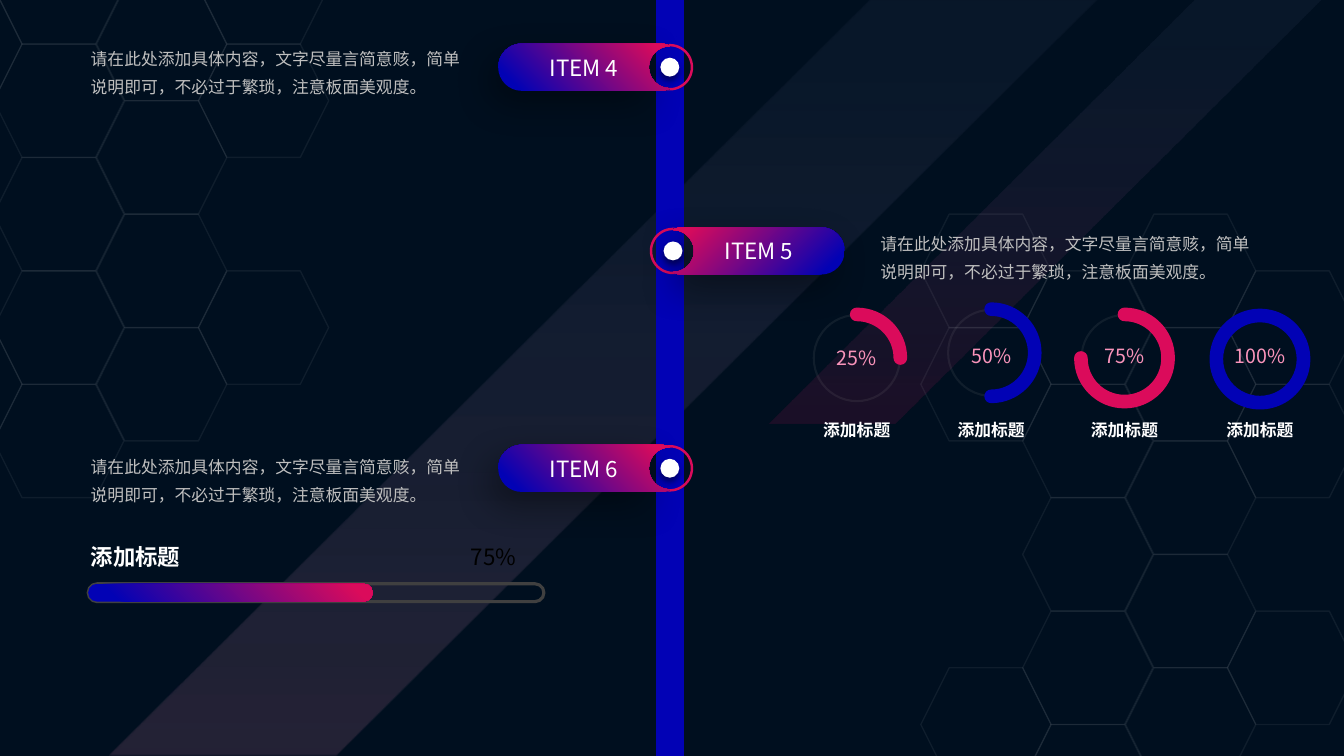
import math
from itertools import islice

from lxml import etree
from pptx import Presentation
from pptx import util as u
from pptx.dml.color import RGBColor
from pptx.enum import shapes, text
from pptx.oxml.ns import qn

PX = 9525
WIDTH, HEIGHT = 1280, 720
FONT = "Noto Sans CJK SC"
COLORS = {
    "navy": "000F1F", "blue": "0202B5", "red": "DB0B5B", "pink": "FA94BB",
    "lilac": "BEBEFE", "white": "FFFFFF", "black": "000000",
    "body": "BFBFBF", "frame": "404040", "track": "A5A5A5",
}
DESCRIPTION = "请在此处添加具体内容，文字尽量言简意赅，简单说明即可，不必过于繁琐，注意板面美观度。"
CAPTION = "添加标题"
SHAPE = shapes.MSO_SHAPE
ALIGN = text.PP_ALIGN
MIDDLE = text.MSO_ANCHOR.MIDDLE

HEX_WIDTH, HEX_HEIGHT = 124, 108
# Half rows filled in each column of the two honeycombs
LEFT_COMB = [(0, 6), (-1, 1, 3, 5, 7), (0, 2, 4, 6), (-1, 1, 5)]
RIGHT_COMB = [(0, 2, 8), (1, 3, 5, 7, 9), (0, 2, 4, 6, 8), (1, 3, 7)]

# Label, hub centre, side of the pill (-1 left, 1 right), description corner
ITEMS = [
    ("ITEM 4", 638, 64, -1, 77, 34),
    ("ITEM 5", 641, 239, 1, 829, 210),
    ("ITEM 6", 638, 446, -1, 77, 423),
]
PILL_RADIUS = 22.5
# Percent, centre, top of the label, colour
GAUGES = [
    (25, 816, 341, 324, "red"),
    (50, 944, 336, 322, "blue"),
    (75, 1071, 341, 322, "red"),
    (100, 1200, 342, 322, "blue"),
]
GAUGE_OUTER, GAUGE_INNER = 48, 35
TRACK_RADIUS, TRACK_WIDTH = 42, 2


def rgb(name):
    return RGBColor.from_string(COLORS[name])


def paint(shape, fill=None, line=None, width=1):
    shape.shadow.inherit = False
    if fill:
        shape.fill.solid()
        shape.fill.fore_color.rgb = rgb(fill)
    else:
        shape.fill.background()
    if line:
        shape.line.color.rgb = rgb(line)
        shape.line.width = u.Pt(width)
    else:
        shape.line.fill.background()


def paint_gradient(shape, stops, angle):
    """Fill with two (position, colour) stops; the angle runs counter-clockwise."""
    shape.fill.gradient()
    shape.fill.gradient_angle = angle
    for stop, (position, color) in zip(shape.fill.gradient_stops, stops):
        stop.position = position
        stop.color.rgb = rgb(color)


def set_opacity(shape, *percents):
    """Give the shape's colours, in order, their opacity."""
    colors = list(shape._element.spPr.iter(qn("a:srgbClr")))
    for color, percent in zip(colors, percents):
        etree.SubElement(color, qn("a:alpha"), val=str(percent * 1000))


def add_shadow(shape, opacity, blur, distance, direction):
    effects = shape._element.spPr.find(qn("a:effectLst"))
    shadow = etree.SubElement(
        effects, qn("a:outerShdw"), blurRad=str(u.Pt(blur)), dist=str(u.Pt(distance)),
        dir=str(direction * 60000), algn="ctr", rotWithShape="0")
    color = etree.SubElement(shadow, qn("a:srgbClr"), val=COLORS["black"])
    etree.SubElement(color, qn("a:alpha"), val=str(opacity * 1000))


def add_preset(slide, kind, left, top, width, height, adjustment=None):
    shape = slide.shapes.add_shape(kind, *(value * PX for value in (left, top, width, height)))
    if adjustment is not None:
        shape.adjustments[0] = adjustment
    return shape


def add_disc(slide, kind, x, y, radius, adjustment=None):
    return add_preset(slide, kind, x - radius, y - radius, 2 * radius, 2 * radius, adjustment)


def arc(x, y, radius, start, end):
    """Start point, then Bézier triples; degrees run clockwise from the top."""
    count = math.ceil(abs(end - start) / 90)
    step = math.radians(end - start) / count
    reach = 4 / 3 * math.tan(step / 4)

    def point(angle, pull):
        return (x + radius * (math.sin(angle) + pull * math.cos(angle)),
                y - radius * (math.cos(angle) - pull * math.sin(angle)))

    angle = math.radians(start)
    points = [point(angle, 0)]
    for _ in range(count):
        points += [point(angle, reach), point(angle + step, -reach), point(angle + step, 0)]
        angle += step
    return points


def add_outline(slide, *arcs):
    """Join arcs by straight lines into one closed outline."""
    corners = [(round(x * PX), round(y * PX)) for points in arcs for x, y in points]
    builder = slide.shapes.build_freeform(*corners[0], scale=1.0)
    builder.add_line_segments(corners[1:], close=True)
    shape = builder.convert_to_shape()
    lines = iter(list(shape._element.iter(qn("a:lnTo"))))
    for index, points in enumerate(arcs):
        if index:
            next(lines)
        for _ in range(len(points) // 3):
            curve = etree.Element(qn("a:cubicBezTo"))
            triple = list(islice(lines, 3))
            triple[0].addprevious(curve)
            for line in triple:
                curve.append(line[0])
                line.getparent().remove(line)
    return shape


def write(shape, words, size, color, align=ALIGN.LEFT, bold=False, anchor=text.MSO_ANCHOR.TOP):
    frame = shape.text_frame
    frame.text = words
    frame.vertical_anchor = anchor
    paragraph = frame.paragraphs[0]
    paragraph.alignment = align
    run = paragraph.runs[0]
    run.font.size = u.Pt(size)
    run.font.bold = bold
    run.font.name = FONT
    run.font.color.rgb = rgb(color)
    etree.SubElement(run.font._element, qn("a:ea"), typeface=FONT)
    return paragraph


def add_text(slide, left, top, width, height, words, size, color, wrap=True, **style):
    box = slide.shapes.add_textbox(left * PX, top * PX, width * PX, height * PX)
    box.text_frame.word_wrap = wrap
    return write(box, words, size, color, **style)


def add_stripe(slide, left, width, height, color, opacity):
    stripe = add_preset(slide, SHAPE.PARALLELOGRAM, left, 0, width, height, 1.006)
    paint(stripe)
    paint_gradient(stripe, [(0, color), (0.94, "lilac")], 90)
    set_opacity(stripe, opacity, 4)


def add_honeycomb(slide, left, top, columns):
    for column, half_rows in enumerate(columns):
        for half_row in half_rows:
            cell = add_preset(slide, SHAPE.HEXAGON, left + round(column * 292 / 3),
                              top + half_row * HEX_HEIGHT // 2, HEX_WIDTH, HEX_HEIGHT)
            paint(cell, line="white")
            set_opacity(cell, 6)


def add_spine(slide):
    spine = slide.shapes.add_connector(
        shapes.MSO_CONNECTOR.STRAIGHT, 638 * PX, 0, 638 * PX, HEIGHT * PX)
    spine.line.color.rgb = rgb("blue")
    spine.line.width = u.Pt(20)
    etree.SubElement(spine._element.spPr, qn("a:effectLst"))


def add_item(slide, label, x, y, side):
    paint(add_disc(slide, SHAPE.OVAL, x, y, 21), line="red", width=1.75)
    far, near = x + 141 * side, x + 9 * side
    pill = add_outline(slide, arc(far, y, PILL_RADIUS, 0, 180 * side),
                       arc(near, y, PILL_RADIUS, 180 * side, 203 * side),
                       arc(x, y, 20, 180 * side, 0),
                       arc(near, y, PILL_RADIUS, -23 * side, 0))
    paint(pill)
    paint_gradient(pill, [(0.1, "blue"), (0.93, "red")], 90 + 45 * side)
    add_shadow(pill, 39, 27, 12, 128)
    write(pill, label, 16, "white", align=ALIGN.CENTER, anchor=MIDDLE)
    dot = add_disc(slide, SHAPE.OVAL, x, y, 9)
    paint(dot, "white")
    add_shadow(dot, 40, 4, 3, 90)


def add_gauge(slide, percent, x, y, label_top, color):
    add_text(slide, x - 34, label_top, 68, 33, f"{percent}%", 14, "pink",
             wrap=False, align=ALIGN.CENTER, anchor=MIDDLE)
    thickness = GAUGE_OUTER - GAUGE_INNER
    if percent == 100:
        sweep = add_disc(slide, SHAPE.DONUT, x, y, GAUGE_OUTER, thickness / (2 * GAUGE_OUTER))
    else:
        track = add_disc(slide, SHAPE.DONUT, x, y, TRACK_RADIUS, TRACK_WIDTH / (2 * TRACK_RADIUS))
        paint(track, "track")
        set_opacity(track, 10)
        end = percent * 3.6
        middle = GAUGE_INNER + thickness / 2
        tip = arc(x, y, middle, 0, end)[-1]
        sweep = add_outline(slide, arc(x, y, GAUGE_OUTER, 0, end),
                            arc(*tip, thickness / 2, end, end + 180),
                            arc(x, y, GAUGE_INNER, end, 0),
                            arc(x, y - middle, thickness / 2, 180, 360))
    paint(sweep, color)
    add_text(slide, x - 57, 395, 114, 29, CAPTION, 12, "white", align=ALIGN.CENTER, bold=True)


def add_progress(slide):
    frame = add_preset(slide, SHAPE.ROUNDED_RECTANGLE, 84, 556, 434, 17, 0.5)
    paint(frame, line="frame", width=2.25)
    bar = add_preset(slide, SHAPE.ROUNDED_RECTANGLE, 84, 556, 271, 17, 0.5)
    paint(bar)
    paint_gradient(bar, [(0.1, "blue"), (0.93, "red")], 45)
    add_text(slide, 77, 513, 183, 36, CAPTION, 16, "white", align=ALIGN.JUSTIFY, bold=True)
    add_text(slide, 430, 513, 80, 36, "75%", 16, "black", align=ALIGN.CENTER)


def main():
    presentation = Presentation()
    presentation.slide_width, presentation.slide_height = WIDTH * PX, HEIGHT * PX
    slide = presentation.slides.add_slide(presentation.slide_layouts[6])
    slide.background.fill.solid()
    slide.background.fill.fore_color.rgb = rgb("navy")
    add_stripe(slide, 104, 941, 720, "pink", 14)
    add_stripe(slide, 732, 526, 403, "red", 12)
    add_honeycomb(slide, 877, 204, RIGHT_COMB)
    add_honeycomb(slide, -103, -12, LEFT_COMB)
    add_spine(slide)
    for label, x, y, side, left, top in ITEMS:
        add_item(slide, label, x, y, side)
        paragraph = add_text(slide, left, top, 384, 60, DESCRIPTION, 12, "body")
        paragraph.line_spacing = u.Pt(20)
    for gauge in GAUGES:
        add_gauge(slide, *gauge)
    add_progress(slide)
    presentation.save("out.pptx")


if __name__ == "__main__":
    main()
